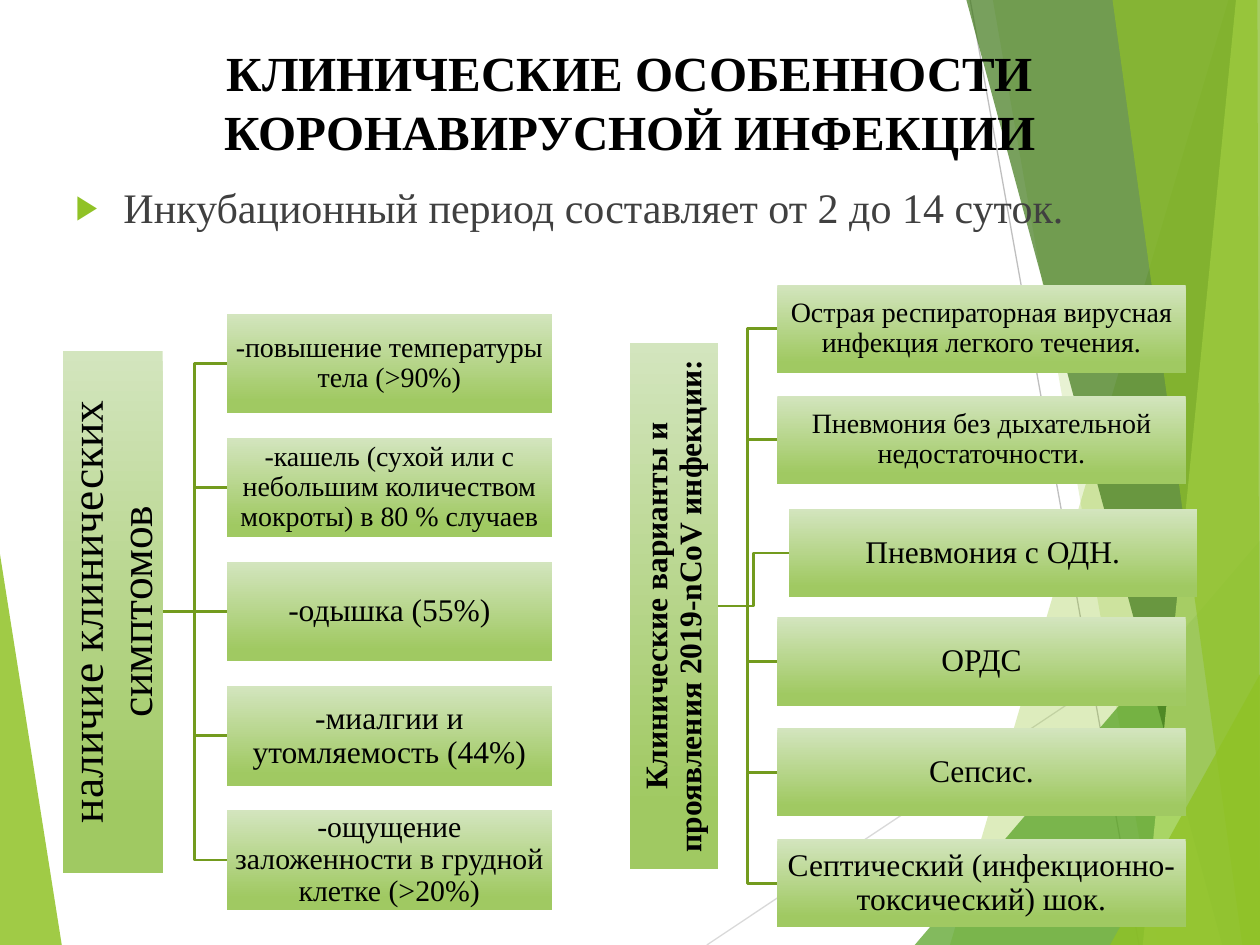
from dataclasses import dataclass

from lxml.etree import SubElement
from pptx import Presentation
from pptx.dml.color import RGBColor
from pptx.enum.shapes import MSO_CONNECTOR as Connector, MSO_SHAPE as Shape
from pptx.enum.text import MSO_ANCHOR as Anchor, MSO_AUTO_SIZE as AutoSize, PP_ALIGN as Align
from pptx.oxml.ns import qn
from pptx.util import Inches, Pt


@dataclass(frozen=True)
class Theme:
    font: str = "Times New Roman"
    black: str = "000000"
    body: str = "404040"
    accent: str = "90C226"
    green: str = "54A021"
    dark: str = "3F7819"
    lime: str = "C0E474"
    branch: str = "739B1E"
    box_top: str = "D3E5BE"
    box_bottom: str = "A0C962"
    grey: str = "BFBFBF"
    pale_grey: str = "D9D9D9"
    title_size: int = 28
    body_size: int = 24
    label_size: int = 26
    large: int = 18
    medium: int = 17
    small: int = 16


@dataclass(frozen=True)
class Tree:
    """Position and sizes of a label with a column of boxes, in grid cells."""
    label_left: float
    label_length: float
    items_left: float
    items_top: float
    item_width: float
    item_height: float
    step: float


def cells(count):
    """Length of a number of grid cells; the slide has 100 columns and 75 rows."""
    return Inches(count / 10)


def color(value):
    return RGBColor.from_string(value)


class SlideBuilder:
    def __init__(self, slide, theme):
        self.slide = slide
        self.shapes = slide.shapes
        self.theme = theme

    def facet(self, fill, opacity, points):
        """Translucent polygon of the background."""
        start, *others = [(cells(x), cells(y)) for x, y in points]
        builder = self.shapes.build_freeform(*start, scale=1.0)
        builder.add_line_segments(others, close=True)
        shape = builder.convert_to_shape()
        shape.shadow.inherit = False
        shape.line.fill.background()
        shape.fill.solid()
        shape.fill.fore_color.rgb = color(fill)
        rgb = shape.fill._xPr.find(qn("a:solidFill"))[0]
        SubElement(rgb, qn("a:alpha"), val=str(opacity * 1000))

    def line(self, start, end, stroke, width, kind=Connector.STRAIGHT):
        connector = self.shapes.add_connector(kind, *map(cells, (*start, *end)))
        connector.line.color.rgb = color(stroke)
        connector.line.width = Pt(width)
        SubElement(connector._element.spPr, qn("a:effectLst"))
        return connector

    def placeholder(self, shape, text, area, size, ink):
        """Fill a template placeholder and bring it in front of the background."""
        self.shapes.element.append(shape._element)
        shape.left, shape.top, shape.width, shape.height = map(cells, area)
        frame = shape.text_frame
        frame.text = text
        frame.auto_size = AutoSize.NONE
        paragraph = frame.paragraphs[0]
        self.style(paragraph, size, ink)
        return paragraph

    def style(self, paragraph, size, ink, bold=False):
        font = paragraph.font
        font.name, font.size, font.bold = self.theme.font, Pt(size), bold
        font.color.rgb = color(ink)

    def title(self, text, area):
        shape = self.shapes.title
        paragraph = self.placeholder(shape, text, area, self.theme.title_size, self.theme.black)
        paragraph.font.bold = True
        paragraph.alignment = Align.CENTER
        shape.text_frame.vertical_anchor = Anchor.MIDDLE

    def bullet(self, text, area):
        paragraph = self.placeholder(self.slide.placeholders[1], text, area,
                                     self.theme.body_size, self.theme.body)
        paragraph.space_before = Pt(10)
        properties = paragraph._p.get_or_add_pPr()
        properties.set("marL", str(Inches(0.38)))
        properties.set("indent", str(Inches(-0.38)))
        bullet_color = SubElement(properties, qn("a:buClr"))
        SubElement(bullet_color, qn("a:srgbClr"), val=self.theme.accent)
        SubElement(properties, qn("a:buSzPct"), val="80000")
        SubElement(properties, qn("a:buChar"), char="▶")

    def box(self, text, area, size, bold=False, rotation=0):
        shape = self.shapes.add_shape(Shape.RECTANGLE, *map(cells, area))
        shape.rotation = rotation
        shape.shadow.inherit = False
        shape.line.fill.background()
        shape.fill.gradient()
        shape.fill.gradient_angle = 270
        stops = zip(shape.fill.gradient_stops, (0, 0.88),
                    (self.theme.box_top, self.theme.box_bottom))
        for stop, position, value in stops:
            stop.position = position
            stop.color.rgb = color(value)
        shape.fill._xPr.find(qn("a:gradFill")).set("rotWithShape", "0")
        frame = shape.text_frame
        frame.text = text
        frame.word_wrap = True
        frame.vertical_anchor = Anchor.MIDDLE
        frame.margin_left = frame.margin_right = cells(0.1)
        frame.margin_top = frame.margin_bottom = cells(0.1)
        paragraph = frame.paragraphs[0]
        paragraph.alignment = Align.CENTER
        paragraph.line_spacing = 0.9
        self.style(paragraph, size, self.theme.black, bold)
        return shape

    def tree(self, layout, label, label_size, items, bold=False):
        """Upright label joined to a column of (text, size, shift) boxes."""
        height = layout.item_height
        middle = layout.items_top + (len(items) - 1) / 2 * layout.step + height / 2
        root = (layout.label_left + height, middle)
        for index, (text, size, (shift_x, shift_y)) in enumerate(items):
            left = layout.items_left + shift_x
            top = layout.items_top + index * layout.step + shift_y
            straight = 2 * index == len(items) - 1
            kind = Connector.STRAIGHT if straight else Connector.ELBOW
            branch = self.line(root, (left, top + height / 2), self.theme.branch, 1.5, kind)
            box = self.box(text, (left, top, layout.item_width, height), size)
            if straight:
                branch.end_connect(box, 1)
        label_left = layout.label_left + (height - layout.label_length) / 2
        area = (label_left, middle - height / 2, layout.label_length, height)
        self.box(label, area, label_size, bold, rotation=270)


def draw_background(builder):
    theme = builder.theme
    builder.facet(theme.accent, 85, [(0, 44), (4.9, 75), (0, 75)])
    builder.line((56.1, 75), (100, 45.7), theme.pale_grey, 0.75)
    builder.line((77, 0), (90.4, 75), theme.grey, 0.75)
    for fill, opacity, points in (
        (theme.accent, 30, [(97.5, 0), (75.4, 75), (100, 75), (100, 0)]),
        (theme.accent, 20, [(78.8, 0), (91.9, 75), (100, 75), (100, 0)]),
        (theme.green, 72, [(72.6, 75), (100, 42.9), (100, 75)]),
        (theme.dark, 70, [(76.7, 0), (97, 75), (100, 75), (100, 0)]),
        (theme.lime, 70, [(98.1, 0), (90.7, 75), (100, 75), (100, 0)]),
        (theme.accent, 65, [(88.3, 0), (98.6, 75), (100, 75), (99.8, 0)]),
        (theme.accent, 80, [(88.1, 75), (100, 53.5), (100, 75)]),
    ):
        builder.facet(fill, opacity, points)


def main():
    presentation = Presentation()
    presentation.slide_width, presentation.slide_height = cells(100), cells(75)
    slide = presentation.slides.add_slide(presentation.slide_layouts[1])
    theme = Theme()
    builder = SlideBuilder(slide, theme)
    draw_background(builder)
    builder.title("КЛИНИЧЕСКИЕ ОСОБЕННОСТИ КОРОНАВИРУСНОЙ ИНФЕКЦИИ", (5, 3, 90, 10.1))
    builder.bullet("Инкубационный период составляет от 2 до 14 суток.", (5, 13.9, 90, 53.1))

    aligned, shifted = (0, 0), (0.9, 0.2)
    builder.tree(Tree(5, 41.4, 18, 24.9, 25.8, 7.9, 9.85),
                 "наличие клинических симптомов", theme.label_size, [
        ("-повышение температуры тела (>90%)", theme.small, aligned),
        ("-кашель (сухой или с небольшим количеством мокроты) в 80 % случаев",
         theme.small, aligned),
        ("-одышка (55%)", theme.large, aligned),
        ("-миалгии и утомляемость (44%)", theme.large, aligned),
        ("-ощущение заложенности в грудной клетке (>20%)", theme.medium, aligned),
    ])
    builder.tree(Tree(50, 41.7, 61.7, 22.6, 32.4, 7, 8.8),
                 "Клинические варианты и проявления 2019-nCoV инфекции:", theme.large, [
        ("Острая респираторная вирусная инфекция легкого течения.", theme.small, aligned),
        ("Пневмония без дыхательной недостаточности.", theme.small, aligned),
        ("Пневмония с ОДН.", theme.large, shifted),
        ("ОРДС", theme.large, aligned),
        ("Сепсис.", theme.large, aligned),
        ("Септический (инфекционно-токсический) шок.", theme.large, aligned),
    ], bold=True)
    presentation.save("out.pptx")


if __name__ == "__main__":
    main()
